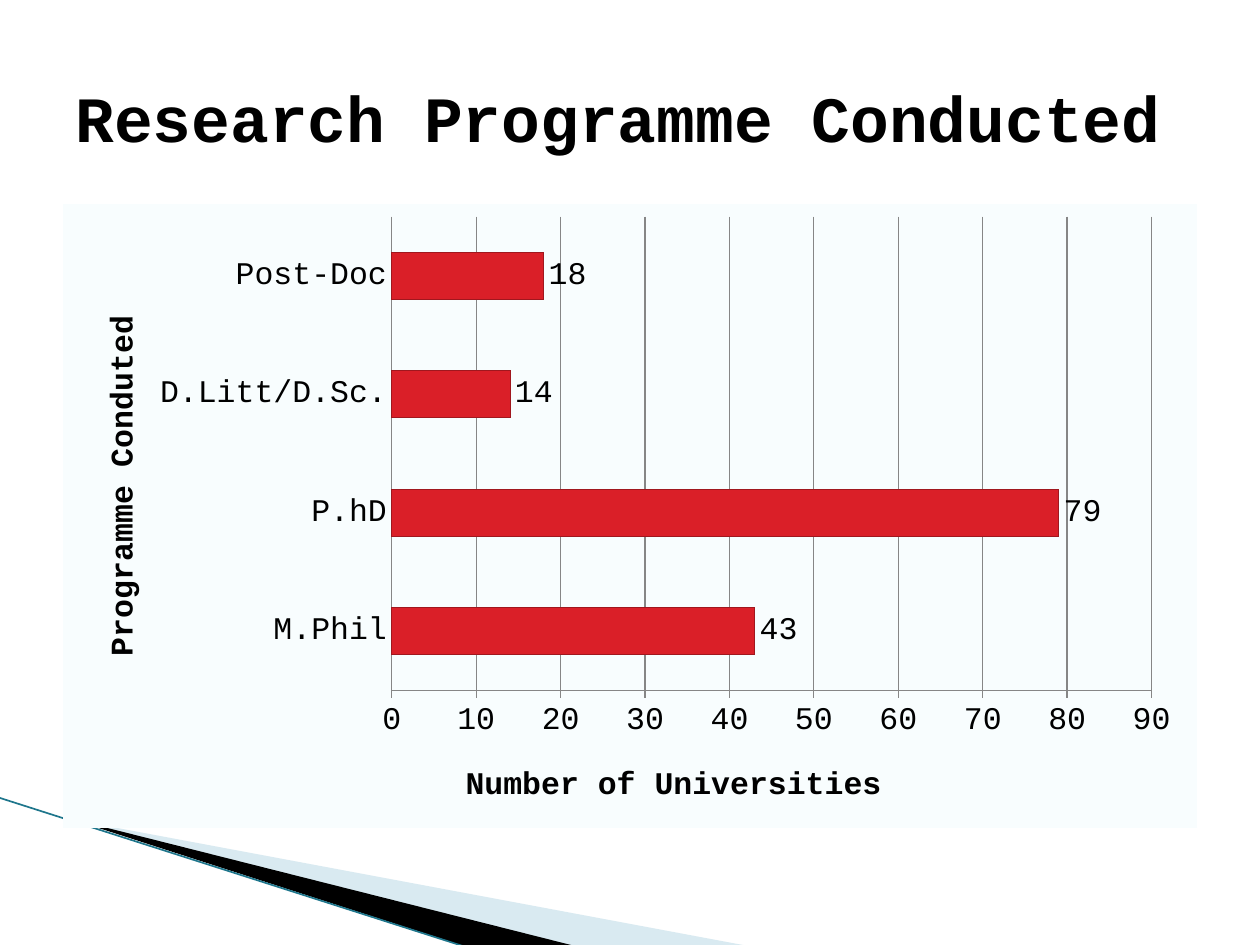
import lxml.etree
import pptx
import pptx.chart.data
import pptx.dml.color
import pptx.enum.chart
import pptx.enum.text
import pptx.oxml
import pptx.oxml.ns
import pptx.util

Inches = pptx.util.Inches
Pt = pptx.util.Pt
qn = pptx.oxml.ns.qn

COLORS = {
    "text": "000000", "pale": "A0CBDC", "dark": "000000", "edge": "1E768C",
    "panel": "F8FDFE", "bar": "DA1F28", "bar_edge": "A0171E", "grid": "868686",
}


def rgb(name):
    return pptx.dml.color.RGBColor.from_string(COLORS[name])


def place(parent, index, **fractions):
    """Give a chart part a manual layout in fractions of the chart."""
    for old in parent.findall(qn("c:layout")):
        parent.remove(old)
    layout = lxml.etree.Element(qn("c:layout"))
    manual = lxml.etree.SubElement(layout, qn("c:manualLayout"))
    if "w" in fractions:
        lxml.etree.SubElement(manual, qn("c:layoutTarget"), val="inner")
    for key in ("xMode", "yMode"):
        lxml.etree.SubElement(manual, qn(f"c:{key}"), val="edge")
    for key, value in fractions.items():
        lxml.etree.SubElement(manual, qn(f"c:{key}"), val=str(value))
    parent.insert(index, layout)


class SlideBuilder:
    def __init__(self, slide, font="Courier New"):
        self.slide = slide
        self.font = font

    def style(self, font, **values):
        for key, value in {"name": self.font, **values}.items():
            setattr(font, key, value)
        font.color.rgb = rgb("text")

    def wedge(self, points, color, alpha=None):
        corners = [(Inches(x), Inches(y)) for x, y in points]
        builder = self.slide.shapes.build_freeform(*corners[0])
        builder.add_line_segments(corners[1:], close=True)
        shape = builder.convert_to_shape()
        shape.shadow.inherit = False
        shape.fill.solid()
        shape.fill.fore_color.rgb = rgb(color)
        shape.line.fill.background()
        if alpha is not None:
            tint = shape.fill._xPr.find(".//" + qn("a:srgbClr"))
            lxml.etree.SubElement(tint, qn("a:alpha"), val=str(alpha * 1000))

    def line(self, start, end, color, width):
        connector = self.slide.shapes.add_connector(
            pptx.enum.shapes.MSO_CONNECTOR.STRAIGHT,
            *(Inches(value) for value in start + end))
        connector.line.color.rgb = rgb(color)
        connector.line.width = Pt(width)
        lxml.etree.SubElement(connector._element.spPr, qn("a:effectLst"))

    def title(self, text, at, size):
        box = self.slide.shapes.add_textbox(*(Inches(value) for value in at))
        frame = box.text_frame
        frame.word_wrap = True
        frame.vertical_anchor = pptx.enum.text.MSO_ANCHOR.MIDDLE
        span = frame.paragraphs[0].add_run()
        span.text = text
        self.style(span.font, size=Pt(size), bold=True)

    def axis(self, axis, title, tick, x, y):
        axis.major_tick_mark = tick
        axis.minor_tick_mark = pptx.enum.chart.XL_TICK_MARK.NONE
        axis.format.line.color.rgb = rgb("grid")
        span = axis.axis_title.text_frame.paragraphs[0].add_run()
        span.text = title
        self.style(span.font, size=Pt(18), bold=True)
        place(axis.axis_title._element, 1, x=x, y=y)

    def bar_chart(self, at, values, category_title, value_title):
        data = pptx.chart.data.CategoryChartData()
        data.categories = list(values)
        data.add_series("Series 1", list(values.values()))
        chart = self.slide.shapes.add_chart(
            pptx.enum.chart.XL_CHART_TYPE.BAR_CLUSTERED,
            *(Inches(value) for value in at), data).chart
        chart.has_legend = False
        chart.has_title = False
        self.style(chart.font, size=Pt(18))
        panel = pptx.oxml.parse_xml(
            f'<c:spPr {pptx.oxml.ns.nsdecls("c", "a")}><a:solidFill>'
            f'<a:srgbClr val="{COLORS["panel"]}"/></a:solidFill>'
            '<a:ln><a:noFill/></a:ln></c:spPr>')
        chart_part = chart._chartSpace.find(qn("c:chart"))
        chart_part.addnext(panel)
        place(chart_part.find(qn("c:plotArea")), 0,
              x=0.29, y=0.02, w=0.67, h=0.76)

        ticks = pptx.enum.chart.XL_TICK_MARK
        self.axis(chart.category_axis, category_title, ticks.NONE, 0.03, 0.17)
        self.axis(chart.value_axis, value_title, ticks.CROSS, 0.35, 0.89)
        scale = chart.value_axis
        limits = {"minimum_scale": 0, "maximum_scale": 90, "major_unit": 10,
                  "has_major_gridlines": True}
        for key, value in limits.items():
            setattr(scale, key, value)
        scale.major_gridlines.format.line.color.rgb = rgb("grid")

        plot = chart.plots[0]
        plot.vary_by_categories = False
        plot.gap_width = 150
        bars = plot.series[0].format
        bars.fill.solid()
        bars.fill.fore_color.rgb = rgb("bar")
        bars.line.color.rgb = rgb("bar_edge")
        plot.has_data_labels = True
        labels = plot.data_labels
        settings = {
            "show_value": True, "number_format": "#,##0",
            "number_format_is_linked": False,
            "position": pptx.enum.chart.XL_LABEL_POSITION.OUTSIDE_END,
        }
        for key, value in settings.items():
            setattr(labels, key, value)
        self.style(labels.font, size=Pt(18))


def main():
    deck = pptx.Presentation()
    deck.slide_width, deck.slide_height = Inches(10), Inches(7.5)
    page = SlideBuilder(deck.slides.add_slide(deck.slide_layouts[6]))
    page.wedge([(0.55, 6.5), (5.95, 7.51), (4.56, 7.51)], "pale", alpha=40)
    page.wedge([(0.53, 6.49), (4.57, 7.51), (3.72, 7.52)], "dark")
    page.line((-0.01, 6.33), (3.71, 7.52), "edge", 0.95)
    page.bar_chart(
        (0.5, 1.62, 9, 4.95),
        {"M.Phil": 43, "P.hD": 79, "D.Litt/D.Sc.": 14, "Post-Doc": 18},
        "Programme Conduted", "Number of Universities")
    page.title("Research Programme Conducted", (0.5, 0.3, 9, 1.25), 36.9)
    deck.save("out.pptx")


if __name__ == "__main__":
    main()
